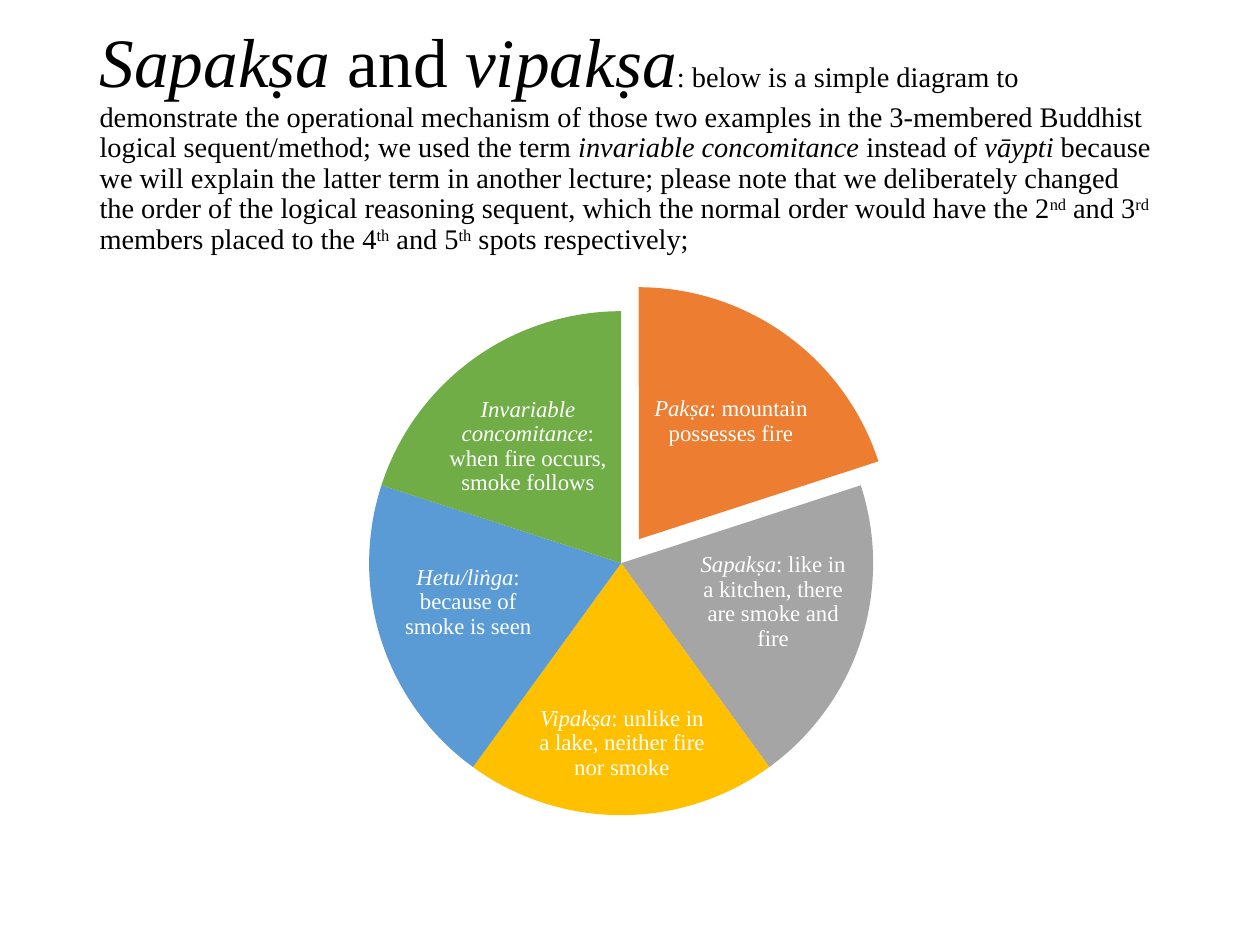
from pptx import Presentation
from pptx.dml.color import RGBColor
from pptx.enum.shapes import MSO_SHAPE
from pptx.enum.text import MSO_ANCHOR, MSO_AUTO_SIZE, PP_ALIGN
from pptx.util import Inches, Pt

BLACK = RGBColor(0x00, 0x00, 0x00)
WHITE = RGBColor(0xFF, 0xFF, 0xFF)
ORANGE = RGBColor(0xED, 0x7D, 0x31)
GREY = RGBColor(0xA5, 0xA5, 0xA5)
GOLD = RGBColor(0xFF, 0xC0, 0x00)
BLUE = RGBColor(0x5B, 0x9B, 0xD5)
GREEN = RGBColor(0x70, 0xAD, 0x47)

FONT = "Times New Roman"
HEADING, BODY, LABEL = 39.6, 16.2, 13
DIAMETER = 4
PIE_AT = (2.93, 2.47)
PULLED_OUT_AT = (3.07, 2.28)

# Text, size, italic, superscript
TITLE = [
    ("Sapakṣa", HEADING, True, False),
    (" and ", HEADING, False, False),
    ("vipakṣa", HEADING, True, False),
    (": below is a simple diagram to demonstrate the operational mechanism of "
     "those two examples in the 3-membered Buddhist logical sequent/method; "
     "we used the term ", BODY, False, False),
    ("invariable concomitance", BODY, True, False),
    (" instead of ", BODY, False, False),
    ("vāypti", BODY, True, False),
    (" because we will explain the latter term in another lecture; please note "
     "that we deliberately changed the order of the logical reasoning sequent, "
     "which the normal order would have the 2", BODY, False, False),
    ("nd", BODY, False, True),
    (" and 3", BODY, False, False),
    ("rd", BODY, False, True),
    (" members placed to the 4", BODY, False, False),
    ("th", BODY, False, True),
    (" and 5", BODY, False, False),
    ("th", BODY, False, True),
    (" spots respectively;", BODY, False, False),
]

# Colour, pie corner, label box, term, explanation; clockwise from the top
SLICES = [
    (ORANGE, PULLED_OUT_AT, (5.12, 2.88, 1.36, 0.93),
     "Pakṣa", ": mountain possesses fire"),
    (GREY, PIE_AT, (5.54, 4.28, 1.19, 1),
     "Sapakṣa", ": like in a kitchen, there are smoke and fire"),
    (GOLD, PIE_AT, (4.22, 5.47, 1.43, 0.86),
     "Vipakṣa", ": unlike in a lake, neither fire nor smoke"),
    (BLUE, PIE_AT, (3.12, 4.28, 1.19, 1),
     "Hetu/liṅga", ": because of smoke is seen"),
    (GREEN, PIE_AT, (3.51, 3.08, 1.36, 0.93),
     "Invariable concomitance", ": when fire occurs, smoke follows"),
]


def set_attributes(target, values):
    for name, value in values.items():
        setattr(target, name, value)


def write_spans(para, spans, color):
    for text, size, italic, superscript in spans:
        span = para.add_run()
        span.text = text
        set_attributes(span.font, {"name": FONT, "size": Pt(size),
                                   "bold": False, "italic": italic})
        span.font.color.rgb = color
        if superscript:
            span.font._element.set("baseline", "30000")


def format_title(title):
    set_attributes(title, {"left": Inches(0.69), "top": Inches(0.4),
                           "width": Inches(8.62), "height": Inches(1.45)})
    frame = title.text_frame
    set_attributes(frame, {"auto_size": MSO_AUTO_SIZE.NONE, "word_wrap": True,
                           "vertical_anchor": MSO_ANCHOR.MIDDLE})
    para = frame.paragraphs[0]
    set_attributes(para, {"alignment": PP_ALIGN.LEFT, "line_spacing": 0.9,
                          "space_before": Pt(0)})
    write_spans(para, TITLE, BLACK)


def add_slice(diagram, corner, start, sweep, color):
    left, top = corner
    piece = diagram.shapes.add_shape(
        MSO_SHAPE.PIE, Inches(left), Inches(top),
        Inches(DIAMETER), Inches(DIAMETER))
    # Angles are stored in 60000ths of a degree, adjustments in 100000ths
    for index, angle in enumerate((start, start + sweep)):
        piece.adjustments[index] = angle % 360 * 0.6
    piece.shadow.inherit = False
    piece.fill.solid()
    piece.fill.fore_color.rgb = color
    piece.line.fill.background()


def add_label(diagram, place, term, explanation):
    box = diagram.shapes.add_textbox(*map(Inches, place))
    frame = box.text_frame
    set_attributes(frame, {"word_wrap": True,
                           "vertical_anchor": MSO_ANCHOR.MIDDLE})
    for side in ("left", "top", "right", "bottom"):
        setattr(frame, f"margin_{side}", Inches(0.02))
    para = frame.paragraphs[0]
    set_attributes(para, {"alignment": PP_ALIGN.CENTER, "line_spacing": 0.9})
    write_spans(para, [(term, LABEL, True, False),
                       (explanation, LABEL, False, False)], WHITE)


def main():
    deck = Presentation()
    set_attributes(deck, {"slide_width": Inches(10),
                          "slide_height": Inches(7.5)})
    page = deck.slides.add_slide(deck.slide_layouts[5])
    format_title(page.shapes.title)

    # Pie diagram of equal slices, starting at twelve o'clock
    diagram = page.shapes.add_group_shape()
    sweep = 360 / len(SLICES)
    for index, (color, corner, place, term, explanation) in enumerate(SLICES):
        add_slice(diagram, corner, 270 + index * sweep, sweep, color)
        add_label(diagram, place, term, explanation)

    deck.save("out.pptx")


if __name__ == "__main__":
    main()
